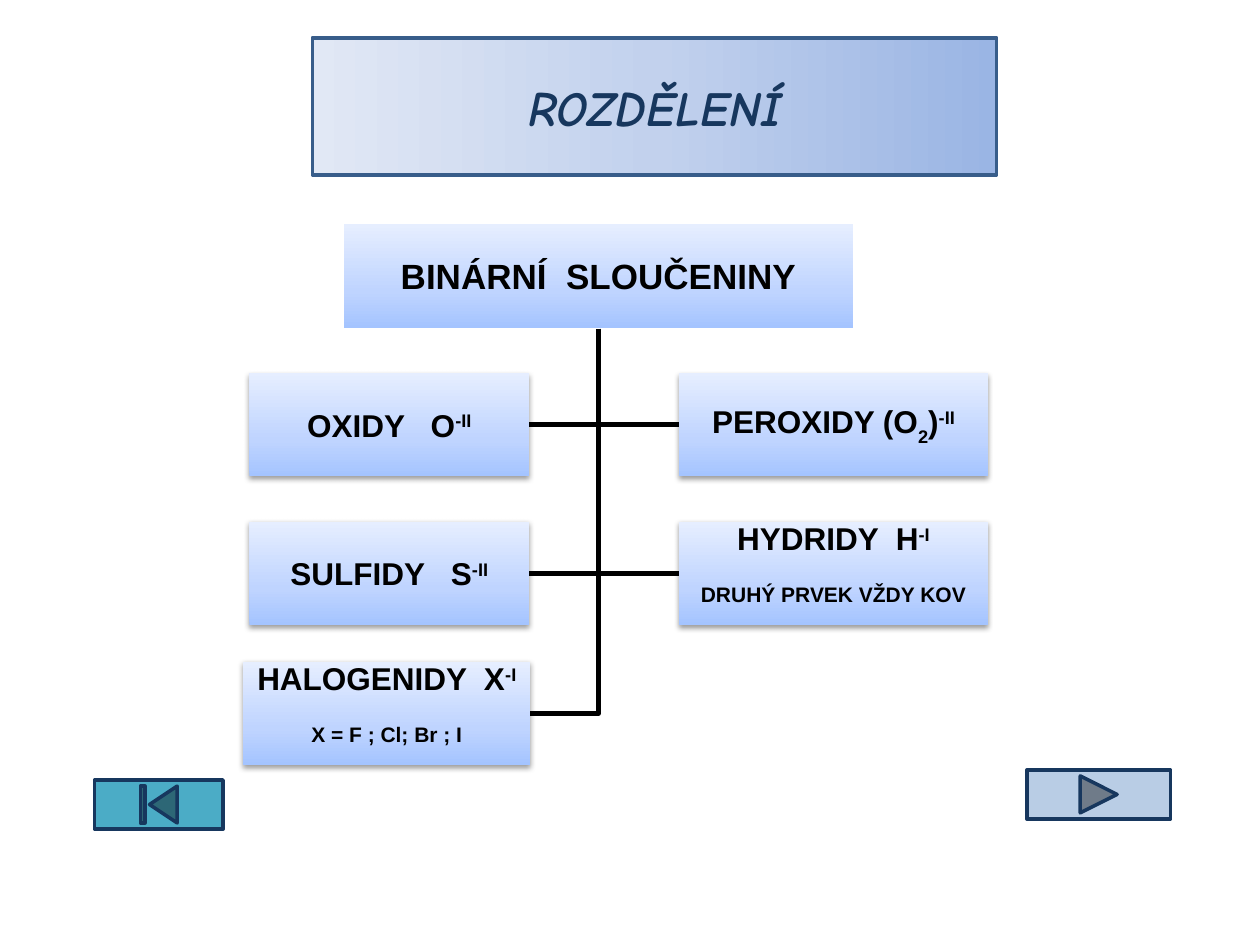
import copy

import lxml.etree
import pptx
import pptx.dml.color
import pptx.enum.shapes
import pptx.enum.text
import pptx.oxml.ns
import pptx.util

Inches, Pt = pptx.util.Inches, pptx.util.Pt
RGB = pptx.dml.color.RGBColor.from_string
SHAPES = pptx.enum.shapes.MSO_SHAPE
ANCHOR = pptx.enum.text.MSO_ANCHOR
qn = pptx.oxml.ns.qn

COLORS = {
    "ink": "000000", "navy": "17375E", "title_line": "385D8A",
    "back": "4BACC6", "forward": "B9CDE5",
}
TITLE_STOPS = [(0, "9AB5E4"), (0.5, "C2D1ED"), (1, "E1E8F5")]
BOX_STOPS = [(0, "A4C4FF"), (0.35, "BFD4FF"), (1, "E6EEFF")]


def add_panel(kind, left, top, width, height, stops=None, angle=0):
    panel = slide.shapes.add_shape(
        kind, Inches(left), Inches(top), Inches(width), Inches(height))
    panel.shadow.inherit = False
    if stops:
        panel.fill.gradient()
        panel.fill.gradient_angle = angle
        stop_list = panel._element.spPr.find(".//" + qn("a:gsLst"))
        stop_list.insert(1, copy.deepcopy(stop_list[0]))
        for stop, (position, color) in zip(panel.fill.gradient_stops, stops):
            stop.position = position
            stop.color.rgb = RGB(color)
    return panel


def add_run(paragraph, text, baseline=0, **formats):
    run = paragraph.add_run()
    run.text = text
    for key, value in formats.items():
        setattr(run.font, key, value)
    if baseline:
        run._r.get_or_add_rPr().set("baseline", str(baseline * 1000))
    return run


deck = pptx.Presentation()
deck.slide_width, deck.slide_height = Inches(10), Inches(7.5)
slide = deck.slides.add_slide(deck.slide_layouts[6])

# Title
title = add_panel(SHAPES.ROUNDED_RECTANGLE, 2.48, 0.3, 5.43, 1.09, TITLE_STOPS, 180)
title.adjustments[0] = 0
title.line.color.rgb = RGB(COLORS["title_line"])
title.line.width = Pt(2)
title.text_frame.vertical_anchor = ANCHOR.MIDDLE
heading = title.text_frame.paragraphs[0]
heading.alignment = pptx.enum.text.PP_ALIGN.CENTER
heading_run = add_run(heading, "ROZDĚLENÍ", size=Pt(28), name="Comic Neue",
                      bold=True, italic=True)
heading_run.font.color.rgb = RGB(COLORS["navy"])

# Navigation buttons
for kind, left, top, width, color in [
    (SHAPES.ACTION_BUTTON_BEGINNING, 0.75, 6.19, 1.02, "back"),
    (SHAPES.ACTION_BUTTON_FORWARD_OR_NEXT, 8.15, 6.11, 1.14, "forward"),
]:
    button = add_panel(kind, left, top, width, 0.39)
    button.fill.solid()
    button.fill.fore_color.rgb = RGB(COLORS[color])
    button.line.color.rgb = RGB(COLORS["navy"])
    button.line.width = Pt(2)

# Branches from the root down the trunk to each box
BOX_HEIGHT = 0.82
ROWS = [2.96, 4.14, 5.25]
TRUNK, ROOT_BOTTOM, LEFT_EDGE, RIGHT_EDGE = 4.75, 2.61, 4.2, 5.39
for row, edge in [(2, LEFT_EDGE), (1, RIGHT_EDGE), (1, LEFT_EDGE),
                  (0, RIGHT_EDGE), (0, LEFT_EDGE)]:
    middle = ROWS[row] + BOX_HEIGHT / 2
    outline = slide.shapes.build_freeform(Inches(TRUNK), Inches(ROOT_BOTTOM))
    outline.add_line_segments(
        [(Inches(TRUNK), Inches(middle)), (Inches(edge), Inches(middle))], close=False)
    branch = outline.convert_to_shape()
    branch.shadow.inherit = False
    branch.fill.background()
    branch.line.color.rgb = RGB(COLORS["ink"])
    branch.line.width = Pt(3)

# Boxes: left, top, width, text size, (text, baseline) parts, note
boxes = [
    (2.73, 1.78, 4.04, 20, [("BINÁRNÍ  SLOUČENINY", 0)], None),
    (1.98, ROWS[0], 2.22, 18, [("OXIDY   O", 0), ("-II", 30)], None),
    (5.39, ROWS[0], 2.45, 18,
     [("PEROXIDY (O", 0), ("2", -30), (")", 0), ("-II", 30)], None),
    (1.98, ROWS[1], 2.22, 18, [("SULFIDY   S", 0), ("-II", 30)], None),
    (5.39, ROWS[1], 2.45, 18, [("HYDRIDY  H", 0), ("-I", 30)], "DRUHÝ PRVEK VŽDY KOV"),
    (1.93, ROWS[2], 2.28, 18, [("HALOGENIDY  X", 0), ("-I", 30)], "X = F ; Cl; Br ; I"),
]
for index, (left, top, width, size, parts, note) in enumerate(boxes):
    box = add_panel(SHAPES.RECTANGLE, left, top, width, BOX_HEIGHT, BOX_STOPS, 90)
    box.line.fill.background()
    if index > 0:  # every box but the root casts a soft shadow
        effects = box._element.spPr.find(qn("a:effectLst"))
        shadow = lxml.etree.SubElement(
            effects, qn("a:outerShdw"), blurRad="40000", dist="20000",
            dir="5400000", rotWithShape="0")
        shade = lxml.etree.SubElement(shadow, qn("a:srgbClr"), val=COLORS["ink"])
        lxml.etree.SubElement(shade, qn("a:alpha"), val="38000")

    frame = box.text_frame
    frame_format = {
        "margin_left": Inches(0.01), "margin_right": Inches(0.01),
        "margin_top": Inches(-0.02 if note else 0.01), "margin_bottom": Inches(0.01),
        "vertical_anchor": ANCHOR.TOP if note else ANCHOR.MIDDLE, "word_wrap": True,
    }
    for key, value in frame_format.items():
        setattr(frame, key, value)

    lines = [(parts, size)] + ([([(note, 0)], 12)] if note else [])
    for number, (line_parts, line_size) in enumerate(lines):
        line = frame.add_paragraph() if number else frame.paragraphs[0]
        line.alignment = pptx.enum.text.PP_ALIGN.CENTER
        line.space_before = Pt(14 * number)
        for text, baseline in line_parts:
            run = add_run(line, text, baseline, size=Pt(line_size), name="Arial", bold=True)
            run.font.color.rgb = RGB(COLORS["ink"])

deck.save("out.pptx")
